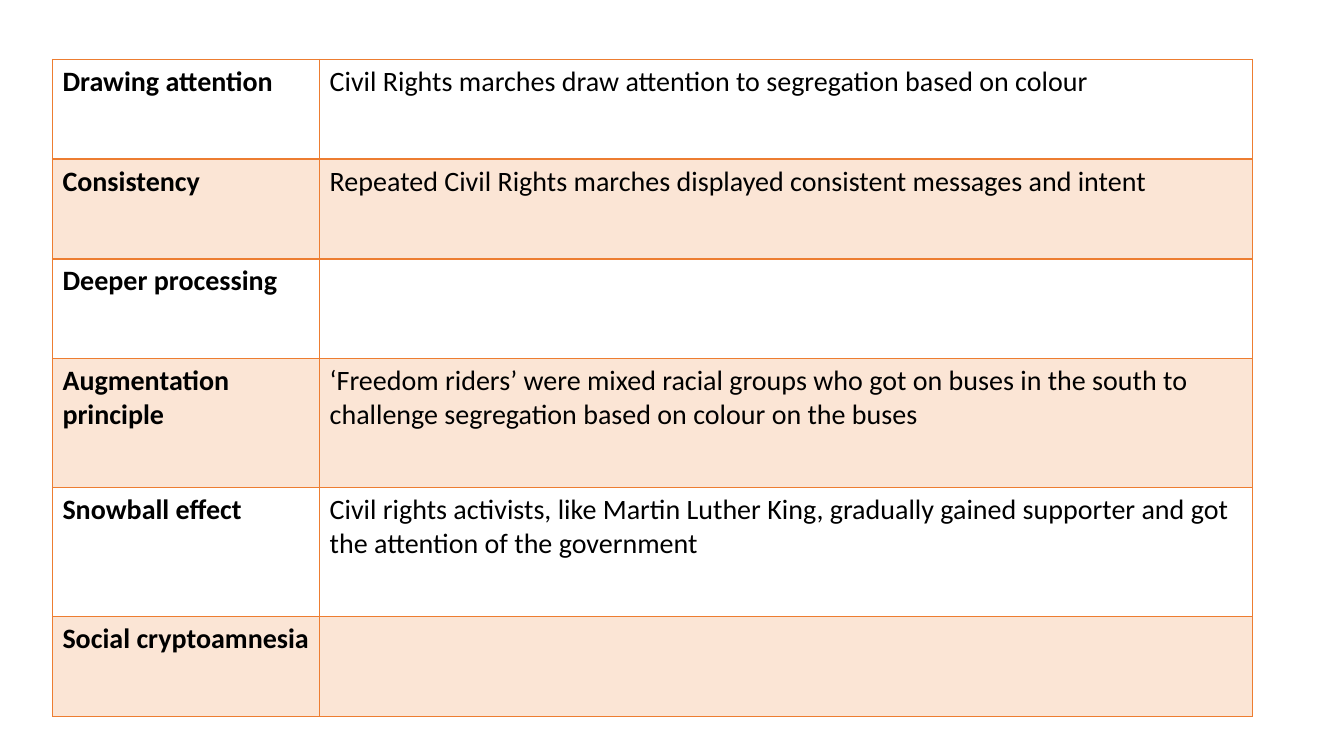
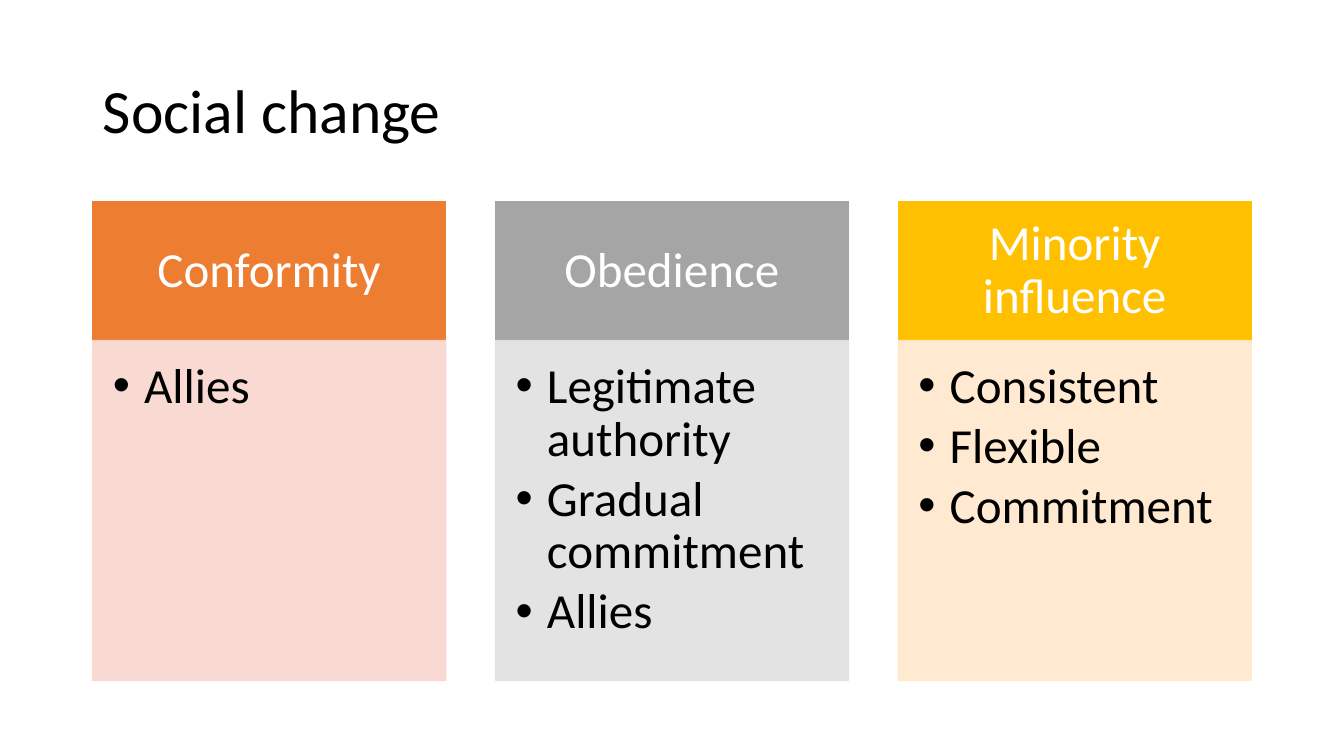
import dataclasses

import pptx
import pptx.dml.color
import pptx.enum.shapes
import pptx.enum.text
import pptx.oxml.ns
import pptx.util
from lxml import etree

EMU_PER_PX = 9144  # 100 px to the inch
ALIGN = pptx.enum.text.PP_ALIGN
ANCHOR = pptx.enum.text.MSO_ANCHOR


@dataclasses.dataclass(frozen=True)
class Theme:
    font: str = "Calibri"
    title_size: int = 44
    card_size: int = 35
    table_size: int = 20
    text: str = "000000"
    inverse: str = "FFFFFF"
    accent: str = "ED7D31"
    gray: str = "A5A5A5"
    gold: str = "FFC000"
    accent_tint: str = "F8D7CE"
    gray_tint: str = "E1E1E1"
    gold_tint: str = "FFE8CC"
    band_opacity: int = 20
    card_opacity: int = 90


THEME = Theme()

TABLE_ROWS = [
    # label, example, row height
    ("Drawing attention",
     "Civil Rights marches draw attention to segregation based on colour", 99),
    ("Consistency",
     "Repeated Civil Rights marches displayed consistent messages and intent", 99),
    ("Deeper processing", "", 99),
    ("Augmentation principle",
     "‘Freedom riders’ were mixed racial groups who got on buses in the south to "
     "challenge segregation based on colour on the buses", 128),
    ("Snowball effect",
     "Civil rights activists, like Martin Luther King, gradually gained supporter "
     "and got the attention of the government", 128),
    ("Social cryptoamnesia", "", 99),
]

CARDS = [
    # heading, heading colour, body colour, points
    ("Conformity", THEME.accent, THEME.accent_tint, ["Allies"]),
    ("Obedience", THEME.gray, THEME.gray_tint,
     ["Legitimate authority", "Gradual commitment", "Allies"]),
    ("Minority influence", THEME.gold, THEME.gold_tint,
     ["Consistent", "Flexible", "Commitment"]),
]


# Units, colour and XML helpers
def px(n):
    return pptx.util.Emu(round(n * EMU_PER_PX))


def rgb(value):
    return pptx.dml.color.RGBColor.from_string(value)


def add_xml(parent, tag, **attrs):
    return etree.SubElement(parent, pptx.oxml.ns.qn(tag), attrs)


def set_opacity(element, percent):
    for color in element.iter(pptx.oxml.ns.qn("a:srgbClr")):
        add_xml(color, "a:alpha", val=str(percent * 1000))


# Text
def write(tf, *lines, size, color=THEME.text, bold=False, align=ALIGN.LEFT,
          anchor=ANCHOR.TOP, margins=None, spacing=None, after=0, bullet_indent=0):
    tf.word_wrap = True
    tf.vertical_anchor = anchor
    if margins:
        (tf.margin_left, tf.margin_top,
         tf.margin_right, tf.margin_bottom) = map(px, margins)
    for i, line in enumerate(lines):
        p = tf.paragraphs[0] if i == 0 else tf.add_paragraph()
        p.alignment = align
        p.line_spacing = spacing
        p.space_after = pptx.util.Pt(after)
        r = p.add_run()
        r.text = line
        r.font.name = THEME.font
        r.font.size = pptx.util.Pt(size)
        r.font.bold = bold
        r.font.color.rgb = rgb(color)
        if bullet_indent:
            pPr = p._p.get_or_add_pPr()
            pPr.set("marL", str(px(bullet_indent)))
            pPr.set("indent", str(-px(bullet_indent)))
            add_xml(pPr, "a:buFont", typeface="Arial")
            add_xml(pPr, "a:buChar", char="•")


# Shapes
def add_box(slide, x, y, w, h, color):
    sp = slide.shapes.add_shape(
        pptx.enum.shapes.MSO_SHAPE.RECTANGLE, px(x), px(y), px(w), px(h))
    sp.shadow.inherit = False
    sp.fill.solid()
    sp.fill.fore_color.rgb = rgb(color)
    sp.line.color.rgb = rgb(color)
    sp.line.width = pptx.util.Pt(1)
    return sp


def add_card(slide, x, y, w, heading, color, tint, points):
    head_h, body_h = 138, 337
    head = add_box(slide, x, y, w, head_h, color)
    write(head.text_frame, heading, size=THEME.card_size, color=THEME.inverse,
          align=ALIGN.CENTER, anchor=ANCHOR.MIDDLE,
          margins=(27, 16, 27, 16), spacing=0.9)
    body = add_box(slide, x, y + head_h, w, body_h, tint)
    set_opacity(body._element.spPr, THEME.card_opacity)
    write(body.text_frame, *points, size=THEME.card_size,
          margins=(20, 20, 27, 31), spacing=0.9, after=5, bullet_indent=31)


# Table cells
def set_borders(cell, color, **widths):
    tcPr = cell._tc.get_or_add_tcPr()
    for side in "LRTB":
        width = pptx.util.Pt(widths.get(side, 1))
        ln = add_xml(tcPr, f"a:ln{side}", w=str(width))
        add_xml(add_xml(ln, "a:solidFill"), "a:srgbClr", val=color)


def fill_cell(cell, banded):
    if banded:
        cell.fill.solid()
        cell.fill.fore_color.rgb = rgb(THEME.accent)
        fill = cell._tc.tcPr.find(pptx.oxml.ns.qn("a:solidFill"))
        set_opacity(fill, THEME.band_opacity)
    else:
        cell.fill.background()


# Slides
def build_examples(prs):
    slide = prs.slides.add_slide(prs.slide_layouts[6])
    widths = (265, 925)
    height = sum(row[2] for row in TABLE_ROWS)
    table = slide.shapes.add_table(len(TABLE_ROWS), len(widths), px(52), px(59),
                                   px(sum(widths)), px(height)).table
    table.first_row = table.horz_banding = False
    for column, width in zip(table.columns, widths):
        column.width = px(width)
    thick_edges = {0: {"B": 2}, 1: {"T": 2}}  # rule under the first row
    for i, (label, example, row_h) in enumerate(TABLE_ROWS):
        table.rows[i].height = px(row_h)
        for j, text in enumerate((label, example)):
            cell = table.cell(i, j)
            set_borders(cell, THEME.accent, **thick_edges.get(i, {}))
            fill_cell(cell, banded=i % 2 == 1)
            if text:
                write(cell.text_frame, text, size=THEME.table_size, bold=j == 0)


def build_social_change(prs):
    slide = prs.slides.add_slide(prs.slide_layouts[5])
    left, width, card_w = 92, 1149, 350
    title = slide.shapes.title
    title.left, title.top, title.width, title.height = map(px, (left, 40, 1150, 145))
    write(title.text_frame, "Social change", size=THEME.title_size,
          anchor=ANCHOR.MIDDLE, spacing=0.9)
    pitch = (width - card_w) / (len(CARDS) - 1)
    for i, card in enumerate(CARDS):
        add_card(slide, left + i * pitch, 200, card_w, *card)


def main():
    prs = pptx.Presentation()
    prs.slide_width, prs.slide_height = px(1333), px(750)
    build_examples(prs)
    build_social_change(prs)
    prs.save("out.pptx")


if __name__ == "__main__":
    main()
